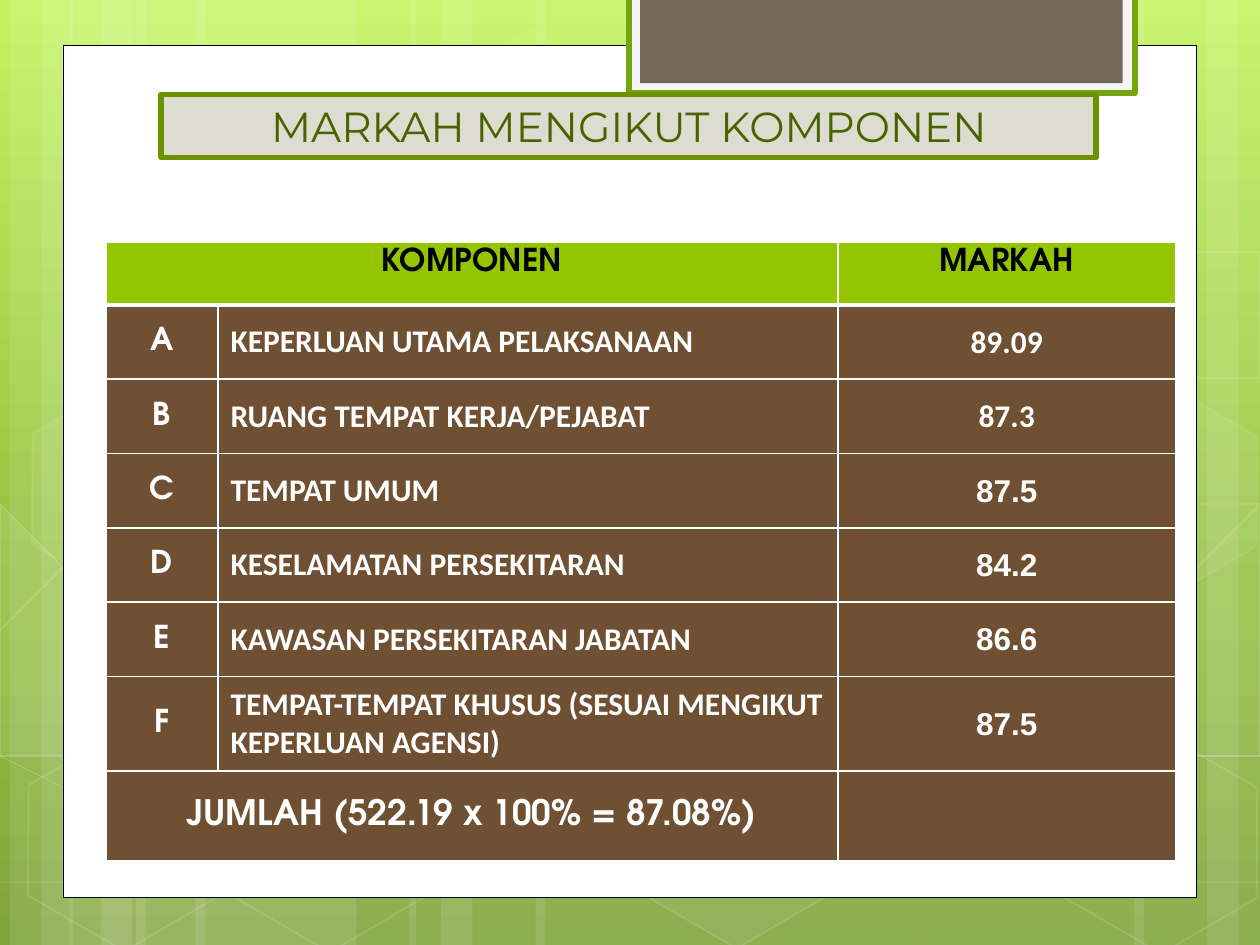
import copy
import lxml.etree
import pptx
import pptx.dml.color
import pptx.enum.shapes
import pptx.enum.text
import pptx.oxml.ns
import pptx.util

Inches = pptx.util.Inches
Pt = pptx.util.Pt
RGBColor = pptx.dml.color.RGBColor
qn = pptx.oxml.ns.qn
SHAPE = pptx.enum.shapes.MSO_SHAPE
ALIGN = pptx.enum.text.PP_ALIGN
ANCHOR = pptx.enum.text.MSO_ANCHOR

WHITE = RGBColor(0xFF, 0xFF, 0xFF)
BLACK = RGBColor(0, 0, 0)
SKY = [(0, RGBColor(0xC3, 0xF3, 0x5F)), (0.62, RGBColor(0x93, 0xBF, 0x3F)),
       (1, RGBColor(0x81, 0xA5, 0x3E))]
TAB_FRAME = RGBColor(0xF5, 0xF5, 0xF5)
TAB_LINE = RGBColor(0x74, 0xA5, 0x10)
TAB_FILL = RGBColor(0x71, 0x68, 0x5A)
TITLE_FILL = RGBColor(0xDD, 0xDC, 0xD0)
TITLE_LINE = RGBColor(0x6D, 0x92, 0x00)
TITLE_TEXT = RGBColor(0x4A, 0x63, 0x00)
TITLE_OUTLINE = RGBColor(0x8C, 0xBB, 0x00)
HEADER = RGBColor(0x94, 0xC6, 0x00)
BROWN = RGBColor(0x70, 0x50, 0x32)

# left, width
BANDS = [(1.08, 1.75), (0.08, 0.5), (0.33, 0.83), (1.55, 1.75), (0.55, 0.5), (0.8, 0.83),
         (7.33, 1.75), (9.58, 0.5), (9, 0.83), (4.25, 3.08), (3.25, 0.5), (3.5, 0.83)]
STRANDS = [
    [(0.07, 6.73), (1.9, 6.78), (4.58, 6.65), (7.92, 6.17), (9.3, 5.81), (10.07, 5.51)],
    [(0.07, 4.77), (1.21, 4.31), (3.47, 3.87), (6.54, 3.87), (10.07, 4.34)],
    [(0.06, 6.17), (1.83, 6.95), (3.34, 7.49)],
    [(0.07, 5.78), (1.28, 6.16), (3.57, 6.73), (6.28, 7.18), (8.53, 7.36), (10.07, 7.34)],
    [(2.42, 7.49), (3.02, 6.91), (3.88, 6.39), (4.7, 6.09), (6.8, 5.69), (7.94, 5.62),
     (9.53, 5.62), (10.06, 5.66)],
]
# left, top, fill opacity, line opacity
HEXAGONS = [(3.34, 0.36, 4, 8), (4.97, 5.89, 6, 12), (0.11, 5.91, 0, 12), (0.14, 3.12, 7, 8),
            (1.74, 5.92, 0, 12), (7.53, 4.53, 10, 12), (8.34, 5.93, 0, 12), (8.34, 3.14, 7, 8)]
# corners, fill opacity
CUT_HEXAGONS = [
    ([(0.08, 4.45), (0.19, 4.38), (0.96, 4.82), (0.95, 5.7), (0.2, 6.14), (0.08, 6.07)], 10),
    ([(9.26, 4.85), (10.01, 4.41), (10.09, 4.46), (10.09, 6.13), (10.02, 6.17), (9.26, 5.73)], 4),
    ([(9.26, 2.07), (10.01, 1.63), (10.1, 1.68), (10.09, 3.35), (10.02, 3.39), (9.26, 2.95)], 0),
]
COLUMN_WIDTHS = [0.89, 4.92, 2.68]
ROW_HEIGHTS = [0.5] + [0.59] * 5 + [0.75, 0.71]
# letter, component, mark, font of the mark
COMPONENTS = [
    ("A", "KEPERLUAN UTAMA PELAKSANAAN", "89.09", "Calibri"),
    ("B", "RUANG TEMPAT KERJA/PEJABAT", "87.3", "Calibri"),
    ("C", "TEMPAT UMUM", "87.5", "Arial"),
    ("D", "KESELAMATAN PERSEKITARAN", "84.2", "Arial"),
    ("E", "KAWASAN PERSEKITARAN JABATAN", "86.6", "Arial"),
    ("F", "TEMPAT-TEMPAT KHUSUS (SESUAI MENGIKUT KEPERLUAN AGENSI)", "87.5", "Arial"),
]


def paint(shape, fill=None, line=None, line_width=1, fill_opacity=100, line_opacity=100):
    shape.shadow.inherit = False
    for part, color, opacity in ((shape.fill, fill, fill_opacity),
                                 (shape.line.fill, line, line_opacity)):
        if color is None or opacity == 0:
            part.background()
            continue
        part.solid()
        part.fore_color.rgb = color
        if opacity < 100:
            color_xml = part._xPr.find(qn("a:solidFill"))[0]
            lxml.etree.SubElement(color_xml, qn("a:alpha"), val=str(opacity * 1000))
    if line is not None:
        shape.line.width = Pt(line_width)


def add_box(slide, kind, left, top, width, height, **look):
    box = slide.shapes.add_shape(kind, *map(Inches, (left, top, width, height)))
    paint(box, **look)
    return box


def add_outline(slide, points, closed, **look):
    builder = slide.shapes.build_freeform(*points[0], scale=Inches(1))
    builder.add_line_segments(points[1:], close=closed)
    paint(builder.convert_to_shape(), **look)


def set_background(slide):
    fill = slide.background.fill
    fill.gradient()
    fill.gradient_angle = 270
    stop_list = slide._element.find(".//" + qn("a:gsLst"))
    stop_list.append(copy.deepcopy(stop_list[0]))
    for stop, (position, color) in zip(fill.gradient_stops, SKY):
        stop.position = position
        stop.color.rgb = color


def add_backdrop(slide):
    for left, width in BANDS:
        add_box(slide, SHAPE.RECTANGLE, left, 0, width, 7.5, fill=WHITE, fill_opacity=10)
    for points in STRANDS:
        add_outline(slide, points, False, line=WHITE, line_width=0.5, line_opacity=20)
    for left, top, fill_opacity, line_opacity in HEXAGONS:
        hexagon = add_box(slide, SHAPE.HEXAGON, left, top, 1.75, 1.52, fill=WHITE, line=WHITE,
                          fill_opacity=fill_opacity, line_opacity=line_opacity)
        hexagon.adjustments[0] = 0.285
        hexagon.rotation = 30
    for corners, fill_opacity in CUT_HEXAGONS:
        add_outline(slide, corners, True, fill=WHITE, line=WHITE,
                    fill_opacity=fill_opacity, line_opacity=12)
    add_box(slide, SHAPE.RECTANGLE, 0.5, 0.36, 9, 6.76, fill=WHITE, line=BLACK, line_width=0.5)
    add_box(slide, SHAPE.RECTANGLE, 4.99, -0.02, 4.02, 0.76,
            fill=TAB_FRAME, line=TAB_LINE, line_width=3.35)
    add_box(slide, SHAPE.RECTANGLE, 5.08, -0.02, 3.83, 0.68, fill=TAB_FILL)


def add_line_xml(parent, tag, color, points):
    line = lxml.etree.SubElement(parent, qn(tag), w=str(Pt(points)))
    solid = lxml.etree.SubElement(line, qn("a:solidFill"))
    lxml.etree.SubElement(solid, qn("a:srgbClr"), val=str(color))
    return line


def format_text(frame, text, size, font, color, align, bold=True):
    frame.text = text
    paragraph = frame.paragraphs[0]
    paragraph.alignment = align
    for run in paragraph.runs:
        run.font.size, run.font.name, run.font.bold = Pt(size), font, bold
        run.font.color.rgb = color
    return paragraph


def fill_cell(cell, text="", font="TeX Gyre Adventor", size=18, align=ALIGN.CENTER, header=False):
    properties = cell._tc.get_or_add_tcPr()
    for side in "LRTB":
        add_line_xml(properties, "a:ln" + side, WHITE, 3 if header and side == "B" else 1)
    cell.fill.solid()
    cell.fill.fore_color.rgb = HEADER if header else BROWN
    cell.vertical_anchor = ANCHOR.TOP if header else ANCHOR.MIDDLE
    return format_text(cell.text_frame, text, size, font, BLACK if header else WHITE, align)


def add_marks_table(slide):
    table = slide.shapes.add_table(len(ROW_HEIGHTS), len(COLUMN_WIDTHS), Inches(0.84),
                                   Inches(1.92), Inches(8.49), Inches(4.89)).table
    table.horz_banding = False
    for column, width in zip(table.columns, COLUMN_WIDTHS):
        column.width = Inches(width)
    for row, height in zip(table.rows, ROW_HEIGHTS):
        row.height = Inches(height)
    last = len(ROW_HEIGHTS) - 1
    for row in (0, last):
        table.cell(row, 0).merge(table.cell(row, 1))
    fill_cell(table.cell(0, 0), "KOMPONEN", header=True)
    fill_cell(table.cell(0, 2), "MARKAH", header=True)
    for row, (letter, component, mark, mark_font) in enumerate(COMPONENTS, 1):
        fill_cell(table.cell(row, 0), letter)
        paragraph = fill_cell(table.cell(row, 1), component, "Calibri", align=ALIGN.LEFT)
        paragraph.space_before = paragraph.space_after = Pt(6)
        mark_cell = table.cell(row, 2)
        fill_cell(mark_cell, mark, mark_font)
        mark_cell.margin_left = mark_cell.margin_right = mark_cell.margin_top = Inches(0.01)
        mark_cell.margin_bottom = 0
    fill_cell(table.cell(last, 0), "JUMLAH (522.19 x 100% = 87.08%)", size=20)
    fill_cell(table.cell(last, 2))


def place_title(slide):
    """Turn the title placeholder into a rounded banner in front of everything."""
    title = slide.shapes.title
    title.left, title.top, title.width, title.height = map(Inches, (1.28, 0.75, 7.42, 0.5))
    geometry = lxml.etree.SubElement(title._element.spPr, qn("a:prstGeom"), prst="roundRect")
    lxml.etree.SubElement(geometry, qn("a:avLst"))
    paint(title, fill=TITLE_FILL, line=TITLE_LINE, line_width=3.35)
    frame = title.text_frame
    frame.auto_size = pptx.enum.text.MSO_AUTO_SIZE.NONE
    frame.vertical_anchor = ANCHOR.MIDDLE
    paragraph = format_text(frame, "MARKAH MENGIKUT KOMPONEN", 24, "Montserrat", TITLE_TEXT,
                            ALIGN.CENTER, bold=False)
    properties = paragraph.runs[0].font._element
    properties.insert(0, add_line_xml(properties, "a:ln", TITLE_OUTLINE, 0.83))
    slide.shapes._spTree.append(title._element)


def main():
    deck = pptx.Presentation()
    deck.slide_width, deck.slide_height = Inches(10), Inches(7.5)
    slide = deck.slides.add_slide(deck.slide_layouts[5])
    set_background(slide)
    add_backdrop(slide)
    add_marks_table(slide)
    place_title(slide)
    deck.save("out.pptx")


if __name__ == "__main__":
    main()
